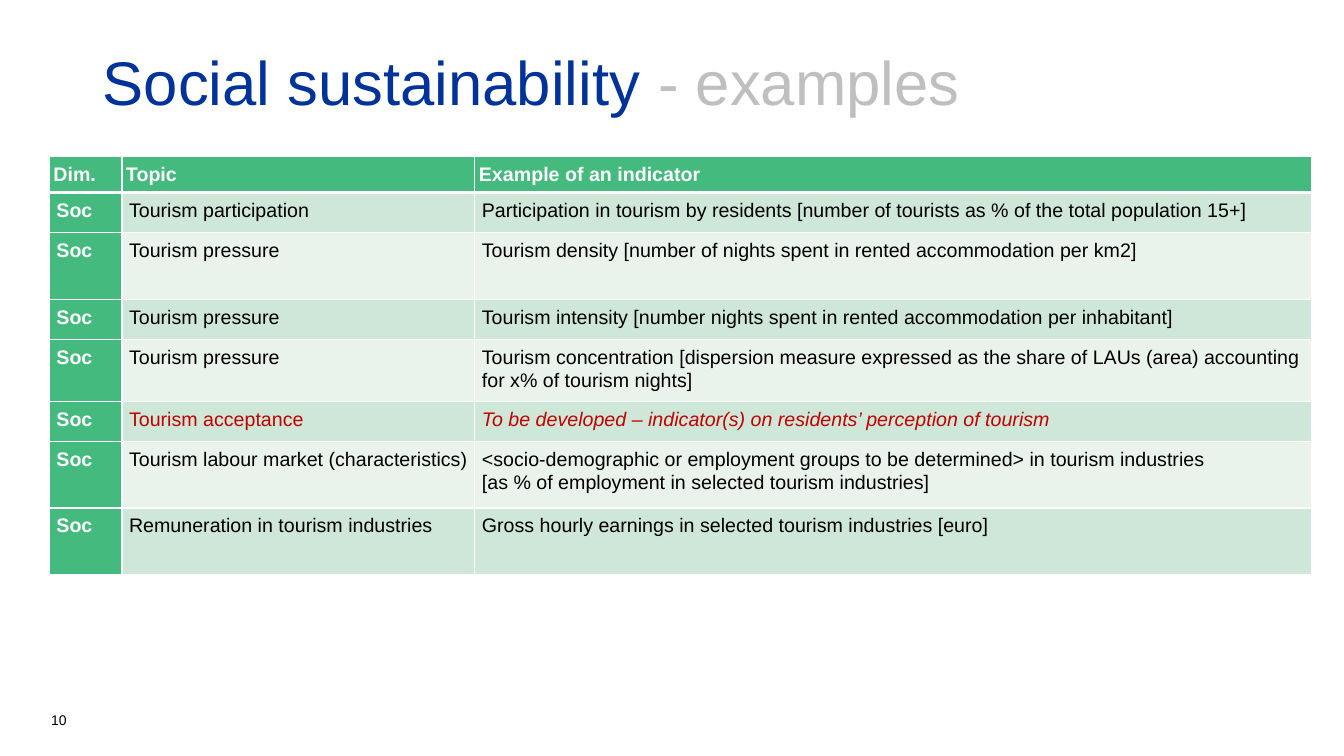
from dataclasses import dataclass

from lxml import etree
from pptx import Presentation
from pptx.dml.color import RGBColor
from pptx.enum.text import MSO_ANCHOR, PP_ALIGN
from pptx.oxml.ns import qn
from pptx.util import Inches, Pt

MIDDLE, TOP, BOTTOM = MSO_ANCHOR.MIDDLE, MSO_ANCHOR.TOP, MSO_ANCHOR.BOTTOM
LEFT, JUSTIFY = PP_ALIGN.LEFT, PP_ALIGN.JUSTIFY


@dataclass(frozen=True)
class Theme:
    font: str = "Arial"
    title_size: int = 44
    table_size: int = 14
    number_size: int = 10
    blue: str = "003399"
    gray: str = "BFBFBF"
    green: str = "44BA7E"
    dark_band: str = "CFE7D8"
    light_band: str = "E9F3EC"
    white: str = "FFFFFF"
    black: str = "000000"
    red: str = "C00000"


THEME = Theme()

HEADER = ("Dim.", "Topic", "Example of an indicator")
INDICATORS = [
    ("Tourism participation",
     "Participation in tourism by residents [number of tourists as % of the total population 15+]"),
    ("Tourism pressure",
     "Tourism density [number of nights spent in rented accommodation per km2]"),
    ("Tourism pressure",
     "Tourism intensity [number nights spent in rented accommodation per inhabitant]"),
    ("Tourism pressure",
     "Tourism concentration [dispersion measure expressed as the share of LAUs (area) "
     "accounting for x% of tourism nights]"),
    ("Tourism acceptance",
     "To be developed – indicator(s) on residents’ perception of tourism"),
    ("Tourism labour market (characteristics)",
     "<socio-demographic or employment groups to be determined> in tourism industries\n"
     "[as % of employment in selected tourism industries]"),
    ("Remuneration in tourism industries",
     "Gross hourly earnings in selected tourism industries [euro]"),
]
ROWS = [HEADER] + [("Soc", topic, indicator) for topic, indicator in INDICATORS]
COLUMN_WIDTHS = (0.72, 3.5, 8.3)
ROW_HEIGHTS = (0.36, 0.4, 0.66, 0.4, 0.61, 0.4, 0.66, 0.66)
JUSTIFIED_ROW, PENDING_ROW, LAST_ROW = 1, 5, len(ROWS) - 1


def style_font(font, size, color, bold=False, italic=False):
    font.name = THEME.font
    font.size = Pt(size)
    font.bold = bold
    font.italic = italic
    font.color.rgb = RGBColor.from_string(color)


def add_borders(cell, top, bottom):
    """Draw white borders around a cell; top and bottom widths are in points."""
    properties = cell._tc.get_or_add_tcPr()
    sides = (("a:lnL", 1), ("a:lnR", 1), ("a:lnT", top), ("a:lnB", bottom))
    for position, (tag, width) in enumerate(sides):
        line = etree.Element(qn(tag), w=str(Pt(width)))
        fill = etree.SubElement(line, qn("a:solidFill"))
        etree.SubElement(fill, qn("a:srgbClr"), val=THEME.white)
        properties.insert(position, line)


presentation = Presentation()
presentation.slide_width = Inches(13.33)
presentation.slide_height = Inches(7.5)
slide = presentation.slides.add_slide(presentation.slide_layouts[5])

# Title
title = slide.shapes.title
title.left, title.top = Inches(0.92), Inches(0.4)
title.width, title.height = Inches(11.5), Inches(0.89)
title.fill.solid()
title.fill.fore_color.rgb = RGBColor.from_string(THEME.white)
title.text_frame.vertical_anchor = MIDDLE
paragraph = title.text_frame.paragraphs[0]
paragraph.alignment = LEFT
paragraph.line_spacing = 0.9
for text, color in (("Social sustainability ", THEME.blue), ("- examples", THEME.gray)):
    run = paragraph.add_run()
    run.text = text
    style_font(run.font, THEME.title_size, color)

# Indicator table
table = slide.shapes.add_table(
    len(ROWS), len(HEADER), Inches(0.49), Inches(1.55),
    Inches(sum(COLUMN_WIDTHS)), Inches(sum(ROW_HEIGHTS))).table
for column, width in zip(table.columns, COLUMN_WIDTHS):
    column.width = Inches(width)
for row, height in zip(table.rows, ROW_HEIGHTS):
    row.height = Inches(height)

for row_index, texts in enumerate(ROWS):
    is_header = row_index == 0
    is_pending = row_index == PENDING_ROW
    band = THEME.dark_band if row_index % 2 else THEME.light_band
    body_color = THEME.red if is_pending else THEME.black
    for column_index, text in enumerate(texts):
        is_label = is_header or column_index == 0
        is_indicator = column_index == 2
        cell = table.cell(row_index, column_index)
        cell.fill.solid()
        cell.fill.fore_color.rgb = RGBColor.from_string(THEME.green if is_label else band)
        add_borders(cell, top=3 if row_index == 1 else 1, bottom=3 if is_header else 1)
        cell.vertical_anchor = MIDDLE if is_header else TOP
        cell.margin_left = cell.margin_right = Inches(0.04 if is_header else 0.07)
        cell.margin_top = cell.margin_bottom = Inches(0.03 if is_header else 0.06)
        cell.text_frame.text = text
        for paragraph in cell.text_frame.paragraphs:
            justified = is_indicator and row_index == JUSTIFIED_ROW
            paragraph.alignment = JUSTIFY if justified else LEFT
            paragraph.line_spacing = 1.05
            style_font(paragraph.font, THEME.table_size,
                       THEME.white if is_label else body_color,
                       bold=is_label, italic=is_pending and is_indicator)
        if row_index != LAST_ROW:
            paragraph.space_after = Pt(12)

# Page number
number_box = slide.shapes.add_textbox(Inches(0.41), Inches(6.87), Inches(3), Inches(0.4))
number_box.text_frame.word_wrap = True
number_box.text_frame.vertical_anchor = BOTTOM
number_box.text_frame.text = "10"
style_font(number_box.text_frame.paragraphs[0].font, THEME.number_size, THEME.black)

presentation.save("out.pptx")
